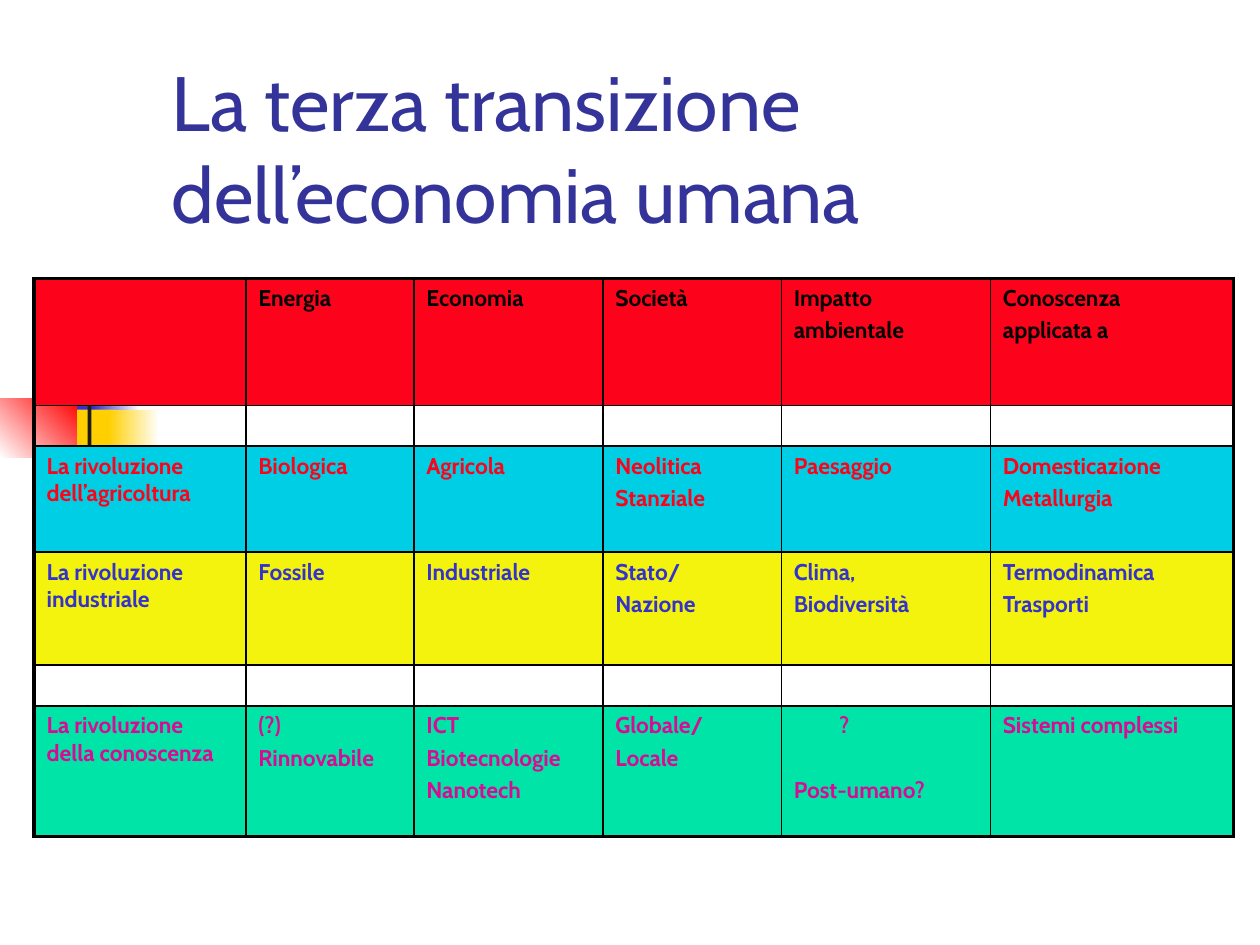
import pptx
import pptx.util
import pptx.dml.color
import pptx.enum.shapes
import pptx.enum.text
import pptx.oxml.ns
from lxml import etree

Pt = pptx.util.Pt
COLORS = {
    "black": "000000", "white": "FFFFFF", "ink": "1C1C1C", "title": "333399",
    "blue": "3333CC", "gold": "FFCF01", "pure_red": "FF0000", "red": "FD031B",
    "cyan": "00CEE4", "yellow": "F3F30D", "green": "00E4A8", "magenta": "DA0A95",
}
CELL_FONT = {"name": "Cabin", "size": Pt(13), "bold": True}
TITLE_FONT = {"name": "Cabin", "size": Pt(44)}
COLUMN_WIDTHS = [121, 96, 108, 102, 119.5, 139]
ROWS = [
    (72.8, "red", "black", ["", "Energia", "Economia", "Società",
                            "Impatto\nambientale", "Conoscenza\napplicata a"]),
    (23.2, None, "black", [""] * 6),
    (60.6, "cyan", "red", ["La rivoluzione dell’agricoltura", "Biologica", "Agricola",
                           "Neolitica\nStanziale", "Paesaggio", "Domesticazione\nMetallurgia"]),
    (64.6, "yellow", "blue", ["La rivoluzione industriale", "Fossile", "Industriale",
                              "Stato/\nNazione", "Clima,\nBiodiversità", "Termodinamica\nTrasporti"]),
    (23.2, None, "black", [""] * 6),
    (74.8, "green", "magenta", ["La rivoluzione della conoscenza", "(?)\nRinnovabile",
                                "ICT\nBiotecnologie\nNanotech", "Globale/\nLocale",
                                "?\nPost-umano?", "Sistemi complessi"]),
]


def rgb(name):
    return pptx.dml.color.RGBColor.from_string(COLORS[name])


def apply_format(target, values):
    for name, value in values.items():
        setattr(target, name, value)


def add_child(parent, tag, **attributes):
    return etree.SubElement(parent, pptx.oxml.ns.qn(tag), attributes)


def add_block(group, box, colors, angle=0):
    shape = group.shapes.add_shape(
        pptx.enum.shapes.MSO_SHAPE.RECTANGLE, *[Pt(length) for length in box])
    shape.shadow.inherit = False
    shape.line.fill.background()
    if len(colors) == 1:
        shape.fill.solid()
        shape.fill.fore_color.rgb = rgb(colors[0])
        return
    shape.fill.gradient()
    shape.fill.gradient_angle = angle
    for stop, color, position in zip(shape.fill.gradient_stops, colors, (0, 1)):
        stop.color.rgb = rgb(color)
        stop.position = position


def add_decoration(slide, left, top):
    group = slide.shapes.add_group_shape()
    blocks = [
        ((23, 8, 34.5, 37.5), ["blue"], 0),
        ((53.5, 8, 26, 37.5), ["blue", "white"], 0),
        ((33, 42, 33, 37.5), ["gold"], 0),
        ((62, 42, 29, 37.5), ["gold", "white"], 0),
        ((0, 36, 44, 33.5), ["white", "pure_red"], 45),
        ((50, 0, 2.3, 83), ["ink"], 0),
        ((25, 65, 685, 4), ["ink", "white"], 0),
    ]
    for (x, y, width, height), colors, angle in blocks:
        add_block(group, (left + x, top + y, width, height), colors, angle)


def add_title(slide, left, top, width, height):
    shape = slide.shapes.add_textbox(Pt(left), Pt(top), Pt(width), Pt(height))
    apply_format(shape.text_frame, {
        "word_wrap": True, "vertical_anchor": pptx.enum.text.MSO_ANCHOR.BOTTOM})
    paragraph = shape.text_frame.paragraphs[0]
    paragraph.text = "La terza transizione \vdell’economia umana"
    for run in paragraph.runs:
        apply_format(run.font, TITLE_FONT)
        run.font.color.rgb = rgb("title")


def set_borders(cell, widths):
    properties = cell._tc.get_or_add_tcPr()
    for position, (side, width) in enumerate(widths.items()):
        line = etree.Element(pptx.oxml.ns.qn("a:" + side), w=str(Pt(width)))
        fill = add_child(line, "a:solidFill")
        add_child(fill, "a:srgbClr", val=COLORS["black"])
        properties.insert(position, line)


def fill_cell(cell, text, fill, color):
    if fill:
        cell.fill.solid()
        cell.fill.fore_color.rgb = rgb(fill)
    else:
        cell.fill.background()
    cell.text = text
    for paragraph in cell.text_frame.paragraphs:
        paragraph.space_before = Pt(2.6)
        for run in paragraph.runs:
            apply_format(run.font, CELL_FONT)
            run.font.color.rgb = rgb(color)
        if not text:
            end = add_child(paragraph._p, "a:endParaRPr", sz="1300")
            add_child(end, "a:latin", typeface="Cabin")


def add_comparison_table(slide, left, top):
    heights = [row[0] for row in ROWS]
    frame = slide.shapes.add_table(
        len(ROWS), len(COLUMN_WIDTHS), Pt(left), Pt(top),
        Pt(sum(COLUMN_WIDTHS)), Pt(sum(heights)))
    table = frame.table
    apply_format(table, {"first_row": False, "horz_banding": False})
    for column, width in zip(table.columns, COLUMN_WIDTHS):
        column.width = Pt(width)
    last_row, last_column = len(ROWS) - 1, len(COLUMN_WIDTHS) - 1
    for i, (height, fill, color, texts) in enumerate(ROWS):
        table.rows[i].height = Pt(height)
        for j, text in enumerate(texts):
            cell = table.cell(i, j)
            fill_cell(cell, text, fill, color)
            edges = {"lnL": j == 0, "lnR": j == last_column,
                     "lnT": i == 0, "lnB": i == last_row}
            set_borders(cell, {side: 2.25 if outer else 1 for side, outer in edges.items()})
    question, outcome = table.cell(last_row, 4).text_frame.paragraphs
    question._p.get_or_add_pPr().set("marL", str(Pt(26)))
    outcome.space_before = Pt(21)


def main():
    presentation = pptx.Presentation()
    apply_format(presentation, {"slide_width": Pt(720), "slide_height": Pt(540)})
    slide = presentation.slides.add_slide(presentation.slide_layouts[6])
    add_decoration(slide, 0, 192)
    add_title(slide, 91, 26, 612, 114)
    add_comparison_table(slide, 19.5, 159)
    presentation.save("out.pptx")


if __name__ == "__main__":
    main()
